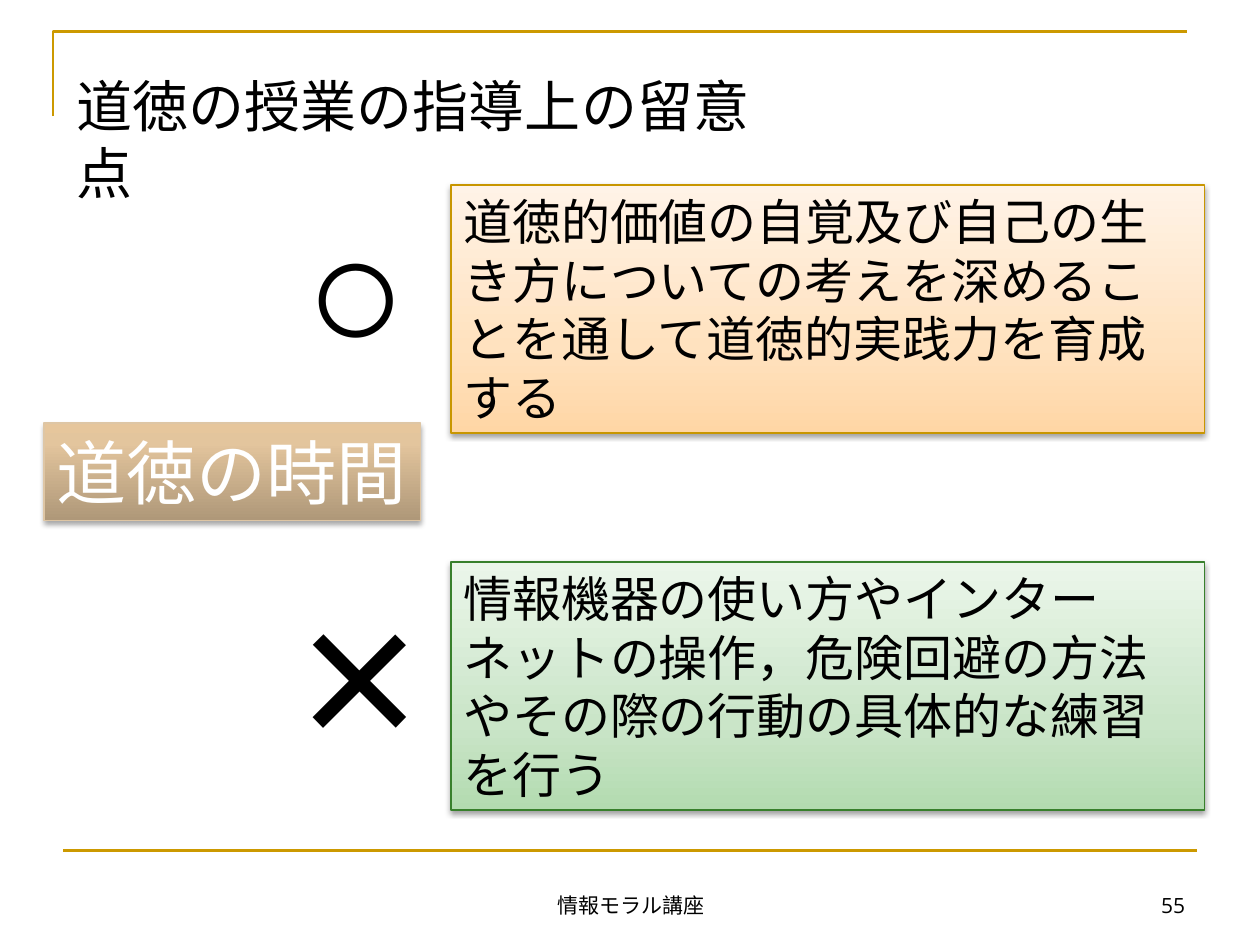
from lxml.etree import SubElement
from pptx import Presentation
from pptx.dml.color import RGBColor
from pptx.enum.shapes import MSO_CONNECTOR as CONN, MSO_SHAPE as SHAPE
from pptx.enum.text import MSO_ANCHOR as ANCHOR, MSO_AUTO_SIZE as AUTO, PP_ALIGN as ALIGN
from pptx.oxml.ns import qn
from pptx.util import Cm, Pt

GOLD = RGBColor(0xCC, 0x99, 0x00)
BLACK = RGBColor(0, 0, 0)
WHITE = RGBColor(0xFF, 0xFF, 0xFF)
TAN_EDGE = RGBColor(0xDE, 0xC6, 0xA5)
ORANGE_EDGE = RGBColor(0xC8, 0x96, 0x00)
GREEN_EDGE = RGBColor(0x38, 0x80, 0x2C)
TAN = [(0, RGBColor(0xAF, 0x98, 0x79)), (80, RGBColor(0xE3, 0xC5, 0x9D)),
       (100, RGBColor(0xE6, 0xC6, 0x9C))]
ORANGE = [(0, RGBColor(0xFF, 0xD6, 0xA5)), (35, RGBColor(0xFF, 0xE2, 0xBF)),
          (100, RGBColor(0xFF, 0xF3, 0xE7))]
GREEN = [(0, RGBColor(0xB3, 0xDB, 0xB0)), (35, RGBColor(0xCA, 0xE5, 0xC8)),
         (100, RGBColor(0xEB, 0xF6, 0xEA))]


def write(sp, text, size=28, font="Vollkorn", color=BLACK, align=ALIGN.LEFT,
          anchor=ANCHOR.TOP, grow=True, vertical=False):
    tf = sp.text_frame
    tf.word_wrap = True
    tf.vertical_anchor = anchor
    tf.auto_size = AUTO.SHAPE_TO_FIT_TEXT if grow else AUTO.NONE
    if vertical:
        sp._element.txBody.bodyPr.set("vert", "eaVert")
    p = tf.paragraphs[0]
    p.alignment = align
    r = p.add_run()
    r.text = text
    r.font.size = Pt(size)
    r.font.name = font
    r.font.color.rgb = color


class MoralSlide:
    """Holds the slide's line style and draws each kind of element on it."""

    def __init__(self, prs, rule_color=GOLD, rule_width=1.5):
        self.s = prs.slides.add_slide(prs.slide_layouts[6])
        self.rule_color = rule_color
        self.rule_width = Pt(rule_width)

    def style_rule(self, sp):
        sp.line.color.rgb = self.rule_color
        sp.line.width = self.rule_width

    def corner(self, *points):
        start, *rest = [(Cm(x), Cm(y)) for x, y in points]
        builder = self.s.shapes.build_freeform(*start)
        builder.add_line_segments(rest, close=False)
        sp = builder.convert_to_shape()
        sp.fill.background()
        sp.shadow.inherit = False
        self.style_rule(sp)

    def rule(self, x1, x2, y):
        c = self.s.shapes.add_connector(CONN.STRAIGHT, Cm(x1), Cm(y), Cm(x2), Cm(y))
        SubElement(c._element.spPr, qn("a:effectLst"))
        self.style_rule(c)

    def text(self, text, x, y, w, h, **fmt):
        write(self.s.shapes.add_textbox(Cm(x), Cm(y), Cm(w), Cm(h)), text, **fmt)

    def panel(self, text, x, y, w, h, stops, edge, opacity=38, distance=1.6, **fmt):
        sp = self.s.shapes.add_shape(SHAPE.RECTANGLE, Cm(x), Cm(y), Cm(w), Cm(h))
        sp.line.color.rgb = edge
        sp.line.width = Pt(0.75)
        self.gradient(sp, stops)
        self.shadow(sp, opacity, distance)
        write(sp, text, **fmt)

    def gradient(self, sp, stops):
        sp.fill.gradient()
        sp.fill.gradient_angle = 90
        gs_list = sp._element.spPr.find(".//" + qn("a:gsLst"))
        for gs in list(gs_list):
            gs_list.remove(gs)
        for pos, color in stops:
            gs = SubElement(gs_list, qn("a:gs"), pos=str(pos * 1000))
            SubElement(gs, qn("a:srgbClr"), val=str(color))

    def shadow(self, sp, opacity, distance):
        sp.shadow.inherit = False
        effects = sp._element.spPr.find(qn("a:effectLst"))
        shadow = SubElement(effects, qn("a:outerShdw"), blurRad=str(Pt(3.1)),
                            dist=str(Pt(distance)), dir="5400000", rotWithShape="0")
        color = SubElement(shadow, qn("a:srgbClr"), val=str(BLACK))
        SubElement(color, qn("a:alpha"), val=str(opacity * 1000))


def main():
    prs = Presentation()
    prs.slide_width, prs.slide_height = Cm(25.4), Cm(19.05)
    s = MoralSlide(prs)

    s.corner((1.07, 2.34), (1.07, 0.64), (23.93, 0.64))
    s.rule(1.27, 24.13, 17.15)
    s.text("道徳の授業の指導上の留意点", 1.3, 1.32, 15.09, 1.63, size=32)

    s.panel("道徳の時間", 0.89, 8.53, 7.59, 1.96, TAN, TAN_EDGE,
            opacity=35, distance=1.8, size=40, color=WHITE)
    s.panel("道徳的価値の自覚及び自己の生き方についての考えを深めることを通して道徳的実践力を育成する",
            9.09, 3.73, 15.19, 5, ORANGE, ORANGE_EDGE)
    s.panel("情報機器の使い方やインターネットの操作，危険回避の方法やその際の行動の具体的な練習を行う",
            9.09, 11.33, 15.19, 5, GREEN, GREEN_EDGE)

    s.text("○", 4.9, 3.94, 4.62, 3.4, size=96, font="Arial", vertical=True)
    s.text("×", 4.5, 11.13, 5.64, 4.39, size=120, font="Arial", vertical=True)

    footer = dict(size=12, font="Open Sans", anchor=ANCHOR.BOTTOM, grow=False)
    s.text("情報モラル講座", 8.69, 17.35, 8.05, 1.27, align=ALIGN.CENTER, **footer)
    s.text("55", 18.21, 17.35, 5.93, 1.27, align=ALIGN.RIGHT, **footer)
    prs.save("out.pptx")


if __name__ == "__main__":
    main()
